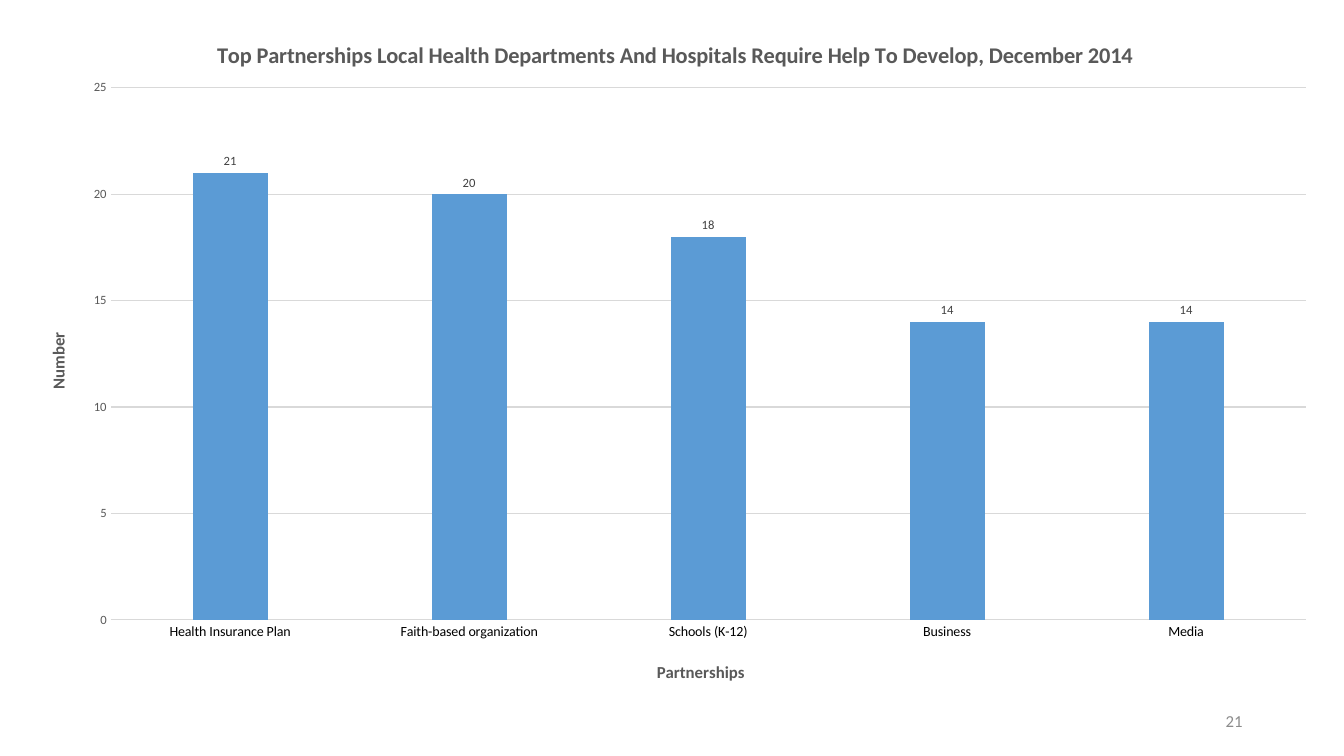
from dataclasses import dataclass

from lxml import etree
from pptx import Presentation
from pptx.chart.data import CategoryChartData
from pptx.dml.color import RGBColor
from pptx.enum.chart import XL_CHART_TYPE, XL_LABEL_POSITION, XL_TICK_MARK
from pptx.enum.text import MSO_ANCHOR, PP_ALIGN
from pptx.oxml.ns import qn
from pptx.util import Inches, Pt

COLUMN_CLUSTERED = XL_CHART_TYPE.COLUMN_CLUSTERED
OUTSIDE_END = XL_LABEL_POSITION.OUTSIDE_END
NO_TICK = XL_TICK_MARK.NONE
MIDDLE = MSO_ANCHOR.MIDDLE
RIGHT = PP_ALIGN.RIGHT
BLANK_LAYOUT = 6

PARTNERSHIPS = {
    "Health Insurance Plan": 21,
    "Faith-based organization": 20,
    "Schools (K-12)": 18,
    "Business": 14,
    "Media": 14,
}


@dataclass(frozen=True)
class Theme:
    """Fonts, colours and type sizes of the slide."""
    font: str = "Calibri"
    bar: str = "5B9BD5"
    rule: str = "D9D9D9"
    heading: str = "595959"
    category: str = "000000"
    label: str = "404040"
    page_number: str = "8C8C8C"
    title_size: float = 16
    axis_title_size: float = 12
    category_size: float = 10
    small_size: float = 9
    rule_width: float = 0.75


class SlideBuilder:
    """Draws styled elements placed by shares of the slide's size."""

    def __init__(self, presentation, theme):
        self.presentation = presentation
        self.theme = theme
        self.slide = presentation.slides.add_slide(presentation.slide_layouts[BLANK_LAYOUT])

    def place(self, left, top, width, height):
        """Turn shares of the slide into lengths."""
        slide_width = self.presentation.slide_width
        slide_height = self.presentation.slide_height
        return (int(left * slide_width), int(top * slide_height),
                int(width * slide_width), int(height * slide_height))

    def style_font(self, font, size, color, bold=False):
        """Apply the theme font with a size and colour."""
        font.name = self.theme.font
        font.size = Pt(size)
        font.bold = bold
        font.color.rgb = RGBColor.from_string(color)

    def style_rule(self, line):
        """Give a line the pale rule style."""
        line.color.rgb = RGBColor.from_string(self.theme.rule)
        line.width = Pt(self.theme.rule_width)

    def add_page_number(self, text, box):
        """Add a right-aligned page number."""
        text_frame = self.slide.shapes.add_textbox(*self.place(*box)).text_frame
        text_frame.word_wrap = True
        text_frame.vertical_anchor = MIDDLE
        text_frame.text = text
        paragraph = text_frame.paragraphs[0]
        paragraph.alignment = RIGHT
        self.style_font(paragraph.runs[0].font, 12, self.theme.page_number)

    def set_layout(self, element, index, settings):
        """Fix the place of a chart part by shares of the chart."""
        previous = element.find(qn("c:layout"))
        if previous is not None:
            element.remove(previous)
        layout = etree.Element(qn("c:layout"))
        manual = etree.SubElement(layout, qn("c:manualLayout"))
        for name, value in settings.items():
            etree.SubElement(manual, qn(f"c:{name}")).set("val", str(value))
        element.insert(index, layout)

    def set_title(self, title, text, size, left, top):
        """Write a bold chart or axis title at a fixed place."""
        title.text_frame.text = text
        run = title.text_frame.paragraphs[0].runs[0]
        self.style_font(run.font, size, self.theme.heading, bold=True)
        self.set_layout(title.element, 1,
                        {"xMode": "edge", "yMode": "edge", "x": left, "y": top})

    def add_column_chart(self, values, box):
        """Add the column chart and return it."""
        theme = self.theme
        data = CategoryChartData(number_format="0")
        data.categories = list(values)
        data.add_series("Series 1", list(values.values()))
        chart = self.slide.shapes.add_chart(COLUMN_CLUSTERED, *self.place(*box), data).chart
        chart.has_legend = False
        self.style_font(chart.font, theme.category_size, theme.category)
        self.set_layout(chart.element.find(".//" + qn("c:plotArea")), 0, {
            "layoutTarget": "inner", "xMode": "edge", "yMode": "edge",
            "x": 0.07, "y": 0.113, "w": 0.911, "h": 0.771})

        plot = chart.plots[0]
        plot.gap_width = 219
        plot.overlap = -27
        plot.vary_by_categories = False
        fill = plot.series[0].format.fill
        fill.solid()
        fill.fore_color.rgb = RGBColor.from_string(theme.bar)
        plot.has_data_labels = True
        labels = plot.data_labels
        labels.show_value = True
        labels.position = OUTSIDE_END
        self.style_font(labels.font, theme.small_size, theme.label)

        for axis in (chart.category_axis, chart.value_axis):
            axis.major_tick_mark = NO_TICK
            axis.minor_tick_mark = NO_TICK
        category_axis, value_axis = chart.category_axis, chart.value_axis
        self.style_font(category_axis.tick_labels.font, theme.category_size, theme.category)
        self.style_rule(category_axis.format.line)
        self.style_font(value_axis.tick_labels.font, theme.small_size, theme.heading)
        value_axis.format.line.fill.background()
        value_axis.minimum_scale = 0
        value_axis.maximum_scale = 25
        value_axis.major_unit = 5
        value_axis.has_major_gridlines = True
        self.style_rule(value_axis.major_gridlines.format.line)
        return chart


def main():
    """Build and save the slide."""
    presentation = Presentation()
    presentation.slide_width = Inches(13.33)
    presentation.slide_height = Inches(7.5)
    theme = Theme()
    builder = SlideBuilder(presentation, theme)
    builder.add_page_number("21", (0.707, 0.927, 0.225, 0.053))
    chart = builder.add_column_chart(PARTNERSHIPS, (0.014, 0.013, 0.976, 0.913))
    builder.set_title(
        chart.chart_title,
        "Top Partnerships Local Health Departments And Hospitals "
        "Require Help To Develop, December 2014",
        theme.title_size, 0.148, 0.038)
    builder.set_title(chart.category_axis.axis_title, "Partnerships",
                      theme.axis_title_size, 0.484, 0.938)
    builder.set_title(chart.value_axis.axis_title, "Number",
                      theme.axis_title_size, 0.019, 0.463)
    presentation.save("out.pptx")


if __name__ == "__main__":
    main()
